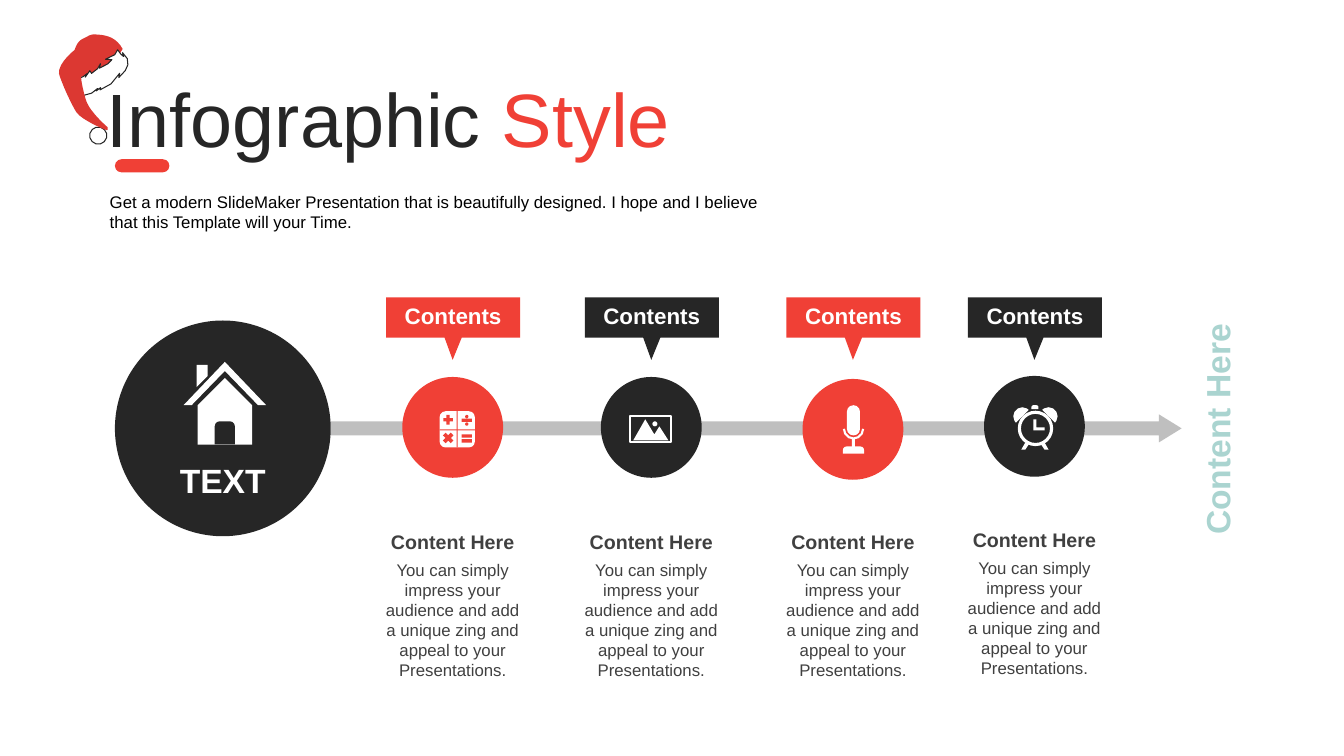
from pptx import Presentation
from pptx.dml.color import RGBColor
from pptx.enum.shapes import MSO_SHAPE as S
from pptx.enum.text import MSO_ANCHOR, MSO_AUTO_SIZE, PP_ALIGN
from pptx.util import Inches, Pt

RED = RGBColor(0xF0, 0x40, 0x36)
HAT = RGBColor(0xDC, 0x38, 0x32)
DARK = RGBColor(0x26, 0x26, 0x26)
GREY = RGBColor(0x40, 0x40, 0x40)
RAIL = RGBColor(0xBF, 0xBF, 0xBF)
MINT = RGBColor(0xAA, 0xD4, 0xD0)
WHITE = RGBColor(0xFF, 0xFF, 0xFF)
BLACK = RGBColor(0, 0, 0)

TITLE = [("Infographic", DARK), (" Style", RED)]
INTRO = ("Get a modern SlideMaker Presentation that is beautifully designed. "
         "I hope and I believe that this Template will your Time.")
BODY = ("You can simply impress your audience and add a unique zing "
        "and appeal to your Presentations.")
# centre x, circle top, heading top, colour, label, heading, body
STEPS = [
    (4.49, 3.74, 5.20, RED, "Contents", "Content Here", BODY),
    (6.46, 3.74, 5.20, DARK, "Contents", "Content Here", BODY),
    (8.46, 3.76, 5.20, RED, "Contents", "Content Here", BODY),
    (10.26, 3.73, 5.18, DARK, "Contents", "Content Here", BODY),
]
FLAG = [(-0.66, 2.95), (0.67, 2.95), (0.67, 3.35), (0.09, 3.35),
        (0, 3.57), (-0.08, 3.35), (-0.66, 3.35)]

# Each curve: a start, then triples of two handles and an end
CROWN = [(0.69, 0.73), (0.68, 0.72), (0.66, 0.71), (0.65, 0.70),
         (0.64, 0.62), (0.68, 0.54), (0.73, 0.49),
         (0.77, 0.43), (0.80, 0.37), (0.87, 0.36),
         (0.94, 0.35), (0.94, 0.33), (1.02, 0.36),
         (1.11, 0.39), (1.19, 0.44), (1.22, 0.56),
         (1.17, 0.61), (1.11, 0.66), (1.05, 0.71),
         (0.98, 0.71), (0.89, 0.71), (0.83, 0.72),
         (0.78, 0.72), (0.75, 0.72), (0.69, 0.73)]
TAIL = [(0.92, 1.32), (0.92, 1.32), (0.75, 1.19), (0.71, 1.10),
        (0.68, 1.01), (0.64, 0.77), (0.64, 0.68),
        (0.65, 0.58), (0.87, 0.47), (0.91, 0.48),
        (0.96, 0.48), (0.89, 0.66), (0.86, 0.72),
        (0.83, 0.77), (0.83, 0.90), (0.83, 0.99),
        (0.83, 1.09), (0.91, 1.23), (0.97, 1.32),
        (0.96, 1.33), (0.98, 1.37), (0.92, 1.32)]
FUR = [(1.26, 0.59), (1.26, 0.63), (1.24, 0.60), (1.22, 0.55), (1.18, 0.59),
       (1.08, 0.61), (1.14, 0.63), (1.09, 0.66), (1.00, 0.68), (1.02, 0.64),
       (0.98, 0.68), (0.91, 0.71), (0.90, 0.68), (0.84, 0.73), (0.87, 0.70),
       (0.82, 0.72), (0.75, 0.73), (0.70, 0.73), (0.68, 0.70), (0.67, 0.75),
       (0.69, 0.79), (0.67, 0.78), (0.74, 0.88), (0.72, 0.87), (0.74, 0.90),
       (0.78, 0.90), (0.86, 0.90), (0.93, 0.87), (0.91, 0.89), (0.96, 0.87),
       (0.95, 0.89), (1.07, 0.86), (1.18, 0.78), (1.16, 0.82), (1.24, 0.77),
       (1.28, 0.72), (1.29, 0.66)]
HOUSE = [
    [(2.23, 3.75), (2.50, 4.02), (2.50, 4.41), (1.96, 4.41), (1.96, 4.02)],
    [(1.95, 3.62), (2.06, 3.62), (2.06, 3.73), (1.95, 3.84)],
    [(2.23, 3.59), (2.64, 4.02), (2.56, 4.02), (2.23, 3.68),
     (1.90, 4.02), (1.82, 4.02)],
]
HILLS = [(6.40, 4.16), (6.49, 4.31), (6.54, 4.23), (6.63, 4.37), (6.28, 4.37)]
HANDS = [(10.25, 4.16), (10.28, 4.16), (10.28, 4.24), (10.36, 4.24),
         (10.36, 4.27), (10.25, 4.27)]
LEGS = [[(10.17, 4.39), (10.21, 4.40), (10.17, 4.46), (10.13, 4.46)],
        [(10.36, 4.39), (10.32, 4.40), (10.36, 4.46), (10.40, 4.46)]]

# Presets: kind, (left, top, width, height), fill, adjustments, line width
# Arc and chord angles are degrees times 0.6
ICONS = [
    (S.ROUND_2_SAME_RECTANGLE, (2.13, 4.18, 0.20, 0.23), DARK, (0.25, 0), 0),
    (S.ROUNDED_RECTANGLE, (4.36, 4.08, 0.35, 0.36), WHITE, (0.17,), 0),
    (S.RECTANGLE, (4.53, 4.08, 0.01, 0.36), RED, (), 0),
    (S.RECTANGLE, (4.36, 4.26, 0.35, 0.01), RED, (), 0),
    (S.MATH_PLUS, (4.38, 4.10, 0.13, 0.13), RED, (0.25,), 0),
    (S.MATH_DIVIDE, (4.56, 4.10, 0.14, 0.14), RED, (), 0),
    (S.MATH_MULTIPLY, (4.37, 4.27, 0.15, 0.15), RED, (0.25,), 0),
    (S.MATH_EQUAL, (4.56, 4.28, 0.14, 0.14), RED, (), 0),
    (S.RECTANGLE, (6.25, 4.13, 0.41, 0.26), None, (), 1.5),
    (S.OVAL, (6.47, 4.18, 0.05, 0.05), WHITE, (), 0),
    (S.ROUNDED_RECTANGLE, (8.40, 4.02, 0.13, 0.30), WHITE, (0.5,), 0),
    (S.ARC, (8.37, 4.16, 0.19, 0.19), None, (0, 108), 1.5),
    (S.RECTANGLE, (8.45, 4.35, 0.03, 0.09), WHITE, (), 0),
    (S.ROUND_2_SAME_RECTANGLE, (8.36, 4.43, 0.21, 0.07), WHITE, (0.5, 0), 0),
    (S.CHORD, (10.05, 4.04, 0.18, 0.18), WHITE, (81, 189), 0),
    (S.CHORD, (10.31, 4.04, 0.18, 0.18), WHITE, (135, 27), 0),
    (S.OVAL, (10.11, 4.09, 0.32, 0.32), DARK, (), 2.25),
    (S.ROUND_2_SAME_RECTANGLE, (10.23, 4.02, 0.07, 0.04), WHITE, (0.5, 0), 0),
]

deck = Presentation()
deck.slide_width, deck.slide_height = Inches(13.33), Inches(7.5)
slide = deck.slides.add_slide(deck.slide_layouts[5])
shapes = slide.shapes


def paint(shape, fill, line=None, width=0.75, turn=0):
    shape.shadow.inherit = False
    if fill is None:
        shape.fill.background()
    else:
        shape.fill.solid()
        shape.fill.fore_color.rgb = fill
    if line is None:
        shape.line.fill.background()
    else:
        shape.line.color.rgb = line
        shape.line.width = Pt(width)
    shape.rotation = turn


def preset(kind, box, fill, adj=(), **style):
    shape = shapes.add_shape(kind, *map(Inches, box))
    for i, value in enumerate(adj):
        shape.adjustments[i] = value
    paint(shape, fill, **style)


def outline(rings, fill, **style):
    """Draw closed rings of points as one freeform."""
    rings = [[(Inches(x), Inches(y)) for x, y in ring] for ring in rings]
    pen = shapes.build_freeform(*rings[0][0], scale=1.0)
    for i, ring in enumerate(rings):
        if i:
            pen.move_to(*ring[0])
        pen.add_line_segments(ring[1:], close=True)
    paint(pen.convert_to_shape(), fill, **style)


def smooth(curve, steps=8):
    """Sample a chain of cubic curves as points."""
    points = [curve[0]]
    for i in range(0, len(curve) - 1, 3):
        for n in range(1, steps + 1):
            t = n / steps
            parts = ((1 - t) ** 3, 3 * t * (1 - t) ** 2,
                     3 * t * t * (1 - t), t ** 3)
            points.append(tuple(
                sum(w * p[axis] for w, p in zip(parts, curve[i:i + 4]))
                for axis in (0, 1)))
    return points


def write(text, box, size, color=BLACK, bold=False, align=PP_ALIGN.CENTER,
          anchor=MSO_ANCHOR.MIDDLE, turn=0, shape=None):
    """Set text, or (text, colour) pairs, in a shape or a new text box."""
    shape = shape or shapes.add_textbox(0, 0, 0, 0)
    shape.left, shape.top, shape.width, shape.height = map(Inches, box)
    shape.rotation = turn
    frame = shape.text_frame
    frame.word_wrap = True
    frame.auto_size = MSO_AUTO_SIZE.NONE
    frame.vertical_anchor = anchor
    para = frame.paragraphs[0]
    para.alignment = align
    for words, tint in [(text, color)] if isinstance(text, str) else text:
        run = para.add_run()
        run.text = words
        run.font.name, run.font.size, run.font.bold = "Arial", Pt(size), bold
        run.font.color.rgb = tint


write(TITLE, (0.96, 0.66, 6.77, 1.01), 54, align=PP_ALIGN.LEFT,
      shape=shapes.title)
write(INTRO, (0.99, 1.85, 6.74, 0.5), 12, align=PP_ALIGN.LEFT,
      anchor=MSO_ANCHOR.TOP)

tilt = 345.1
outline([smooth(CROWN)], HAT, turn=tilt)
preset(S.OVAL, (0.89, 1.26, 0.17, 0.17), WHITE, line=DARK, turn=tilt)
outline([FUR], WHITE, line=DARK, turn=tilt)
outline([smooth(TAIL)], HAT, turn=tilt)
preset(S.ROUNDED_RECTANGLE, (1.14, 1.58, 0.54, 0.13), RED, (0.5,))

preset(S.RIGHT_ARROW, (3.28, 4.11, 8.44, 0.28), RAIL, (0.5, 0.81))
preset(S.OVAL, (1.14, 3.18, 2.14, 2.14), DARK)
write("Content Here", (10.9, 4.01, 2.34, 0.5), 24, MINT, True, turn=270)
write("TEXT", (1.66, 4.51, 1.1, 0.5), 24, WHITE, True)

for mid, top, low, color, label, head, body in STEPS:
    preset(S.OVAL, (mid - 0.5, top, 1, 1), color)
    outline([[(mid + x, y) for x, y in FLAG]], color)
    write(label, (mid - 0.66, 2.95, 1.33, 0.37), 16, WHITE, True)
    write(head, (mid - 0.79, low, 1.58, 0.34), 14, GREY, True)
    write(body, (mid - 0.79, low + 0.3, 1.58, 1.31), 12, GREY,
          anchor=MSO_ANCHOR.TOP)

outline(HOUSE, WHITE)
for kind, box, fill, adj, width in ICONS:
    preset(kind, box, fill, adj, line=WHITE if width else None, width=width)
outline([HILLS], WHITE)
outline([HANDS], WHITE)
outline(LEGS, WHITE)

deck.save("out.pptx")
